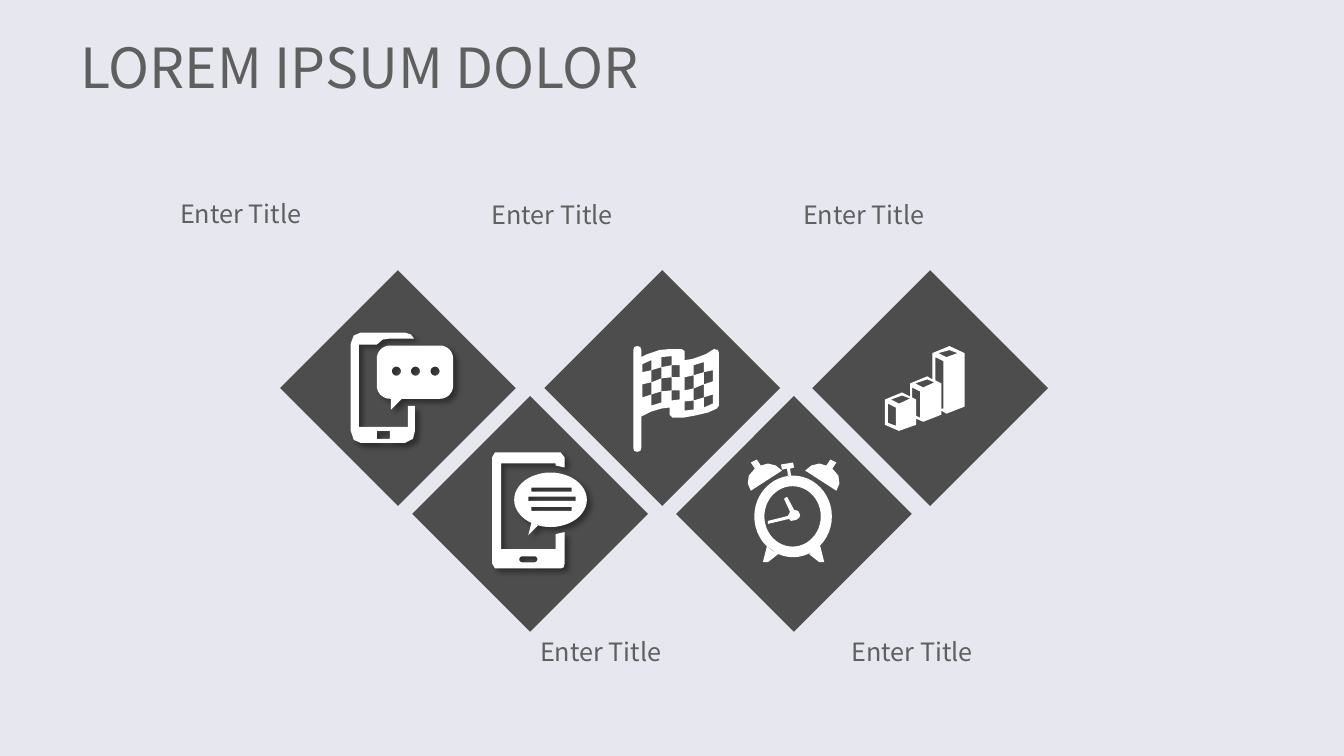
import math

import pptx
import pptx.dml.color
import pptx.enum.shapes
import pptx.enum.text
import pptx.util
import pptx.oxml
from pptx.util import Cm

FONT = "Noto Sans CJK JP"
TEXT, TILE, ICON, BACKDROP = "5F5F5F", "4D4D4D", "FFFFFF", "E7E7EF"
TILE_SIZE = Cm(5.94)
FINENESS = 10  # freeform steps per icon grid unit
SHADOW = (
    '<a:outerShdw xmlns:a="http://schemas.openxmlformats.org/drawingml/2006/main" '
    'blurRad="50800" dist="50800" dir="2700000" algn="tl" rotWithShape="0">'
    '<a:srgbClr val="000000"><a:alpha val="40000"/></a:srgbClr></a:outerShdw>'
)


def paint(fill, color):
    fill.solid()
    fill.fore_color.rgb = pptx.dml.color.RGBColor.from_string(color)


# Outlines on an icon's grid
def arc(cx, cy, rx, ry, start=0, sweep=360, steps=48):
    angles = [math.radians(start + sweep * i / steps) for i in range(steps + 1)]
    return [(cx + rx * math.cos(a), cy + ry * math.sin(a)) for a in angles]


def rounded(left, top, width, height, r):
    right, bottom = left + width, top + height
    corners = [(right - r, bottom - r), (left + r, bottom - r),
               (left + r, top + r), (right - r, top + r)]
    return [point for i, (x, y) in enumerate(corners)
            for point in arc(x, y, r, r, 90 * i, 90, 8)]


def rectangle(left, top, right, bottom):
    return [(left, top), (right, top), (right, bottom), (left, bottom)]


def mirrored(outline, width):
    return [(width - x, y) for x, y in outline]


# Icons: each returns its grid width and outlines; inner outlines are holes
def message_phone():
    body = [(10, 0), (54, 0), (60, 2), (63, 6), (39, 6), (32, 7), (26, 12), (8, 12),
            (8, 94), (57, 94), (57, 73), (64, 73), (64, 98), (62, 106), (54, 110),
            (10, 110), (3, 107), (0, 98), (0, 11), (3, 3)]
    tail = [(40, 66), (40, 77), (51, 66)]
    dots = [arc(x, 38.5, 4.5, 4.5) for x in (45.5, 64.5, 84)]
    return 102, [body, rounded(26, 13, 76, 53, 13), tail,
                 rectangle(26, 98, 39, 106)] + dots


def text_phone():
    body = [(3, 0), (68, 0), (72, 5), (72, 15), (63, 13), (63, 11), (9, 11), (9, 96),
            (63, 96), (63, 81), (72, 79), (72, 110), (71, 114), (68, 115), (3, 115),
            (0, 110), (0, 5)]
    tail = [(46, 72), (36, 82), (39, 70)]
    lines = [rectangle(39, 35, 79, 39), rectangle(36, 44, 83, 48),
             rectangle(39, 54, 79, 58)]
    return 94, [body, arc(58, 47, 36, 27), tail, rounded(27, 103, 18, 6, 3)] + lines


def flag():
    cloth = [(4, 0), (7, 1), (8, 4), (8, 11), (14, 8), (26, 4), (36, 3), (48, 3),
             (51, 5), (51, 14), (58, 13), (64, 11), (72, 8), (80, 3), (84, 4), (85, 7),
             (85, 59), (83, 62), (74, 66), (61, 69), (50, 71), (39, 71), (36, 68),
             (36, 61), (28, 62), (18, 65), (8, 70), (8, 101), (7, 104), (4, 105),
             (1, 104), (0, 101), (0, 4), (1, 1)]
    # Left edge, right edge, then the heights of the four corners
    checks = [(9, 18, 18, 14, 24, 26), (9, 18, 38, 36, 48, 51),
              (18, 28, 24, 21, 32, 36), (18, 28, 48, 45, 56, 59),
              (28, 38, 11, 10, 19, 21), (28, 38, 32, 31, 44, 45),
              (38, 46, 19, 19, 31, 31), (38, 46, 44, 44, 53, 54),
              (51, 60, 31, 29, 42, 44), (51, 60, 55, 54, 63, 64),
              (60, 70, 19, 16, 26, 29), (60, 70, 42, 38, 51, 54),
              (70, 79, 26, 24, 35, 38), (70, 79, 51, 48, 57, 61)]
    return 85, [cloth] + [[(left, a), (right, b), (right, c), (left, d)]
                          for left, right, a, b, c, d in checks]


def alarm_clock():
    bell = [(14, 6), (10, 0), (4, 3), (8, 9), (2, 16), (1, 24), (4, 31), (35, 11),
            (29, 6), (21, 4)]
    foot = [(20, 86), (16, 102), (21, 102), (31, 94)]
    stem = [(41, 17), (40, 9), (35, 10), (34, 5), (46, 3), (47, 8), (43, 9), (44, 16)]
    hands = [(37, 39), (43, 52), (41, 56), (21, 61), (21, 64), (42, 59), (44, 61),
             (49, 60), (52, 58), (53, 55), (51, 51), (47, 50), (40, 37)]
    return 93, [arc(46, 56.5, 38.5, 40.5), arc(45.5, 56.5, 28, 30), hands, stem,
                bell, mirrored(bell, 93), foot, mirrored(foot, 93)]


def bars():
    blocks = [(25, 37), (42, 30), (47, 33), (47, 7), (64, 0), (79, 7), (79, 60),
              (61, 67), (56, 64), (56, 68), (38, 75), (31, 72), (31, 78), (14, 84),
              (0, 78), (0, 53), (17, 46), (31, 53), (31, 69), (35, 71), (35, 45),
              (27, 41), (27, 51), (25, 50)]
    tops = [[(53, 7), (61, 11), (72, 7), (64, 4)],
            [(30, 37), (38, 41), (49, 36), (42, 33)],
            [(6, 53), (14, 57), (25, 52), (17, 49)]]
    sides = [[(3, 57), (11, 61), (11, 79), (3, 76)],
             [(50, 34), (56, 37), (56, 62), (58, 62), (58, 15), (50, 11)]]
    return 79, [blocks] + tops + sides


def add_icon(page, left, top, width, icon, shadowed):
    grid_width, outlines = icon()
    builder = None
    for outline in outlines:
        points = [(x * FINENESS, y * FINENESS) for x, y in outline]
        if builder is None:
            builder = page.shapes.build_freeform(
                *points[0], scale=width / (grid_width * FINENESS))
        else:
            builder.move_to(*points[0])
        builder.add_line_segments(points[1:], close=True)
    shape = builder.convert_to_shape(left, top)
    paint(shape.fill, ICON)
    shape.line.fill.background()
    shape.shadow.inherit = False
    if shadowed:
        effects = shape._element.spPr.find(pptx.oxml.ns.qn("a:effectLst"))
        effects.append(pptx.oxml.parse_xml(SHADOW))


def add_text(page, left, top, width, height, text, size):
    box = page.shapes.add_textbox(left, top, width, height)
    box.text_frame.word_wrap = True
    para = box.text_frame.paragraphs[0]
    para.text = text
    para.font.name = FONT
    para.font.size = pptx.util.Pt(size)
    para.font.color.rgb = pptx.dml.color.RGBColor.from_string(TEXT)
    return box


def add_title(page, left, top, width, height):
    box = add_text(page, left, top, width, height, "LOREM IPSUM DOLOR", 39.5)
    frame = box.text_frame
    frame.vertical_anchor = pptx.enum.text.MSO_ANCHOR.MIDDLE
    frame.margin_left = frame.margin_right = Cm(0.33)
    frame.margin_top = frame.margin_bottom = Cm(0.18)


def add_tile(page, left, top, icon, icon_box, label_at, shadowed=False):
    """Diamond with its icon and label, both placed from its corner."""
    diamond = page.shapes.add_shape(
        pptx.enum.shapes.MSO_SHAPE.DIAMOND, left, top, TILE_SIZE, TILE_SIZE)
    paint(diamond.fill, TILE)
    diamond.line.fill.background()
    diamond.shadow.inherit = False
    dx, dy, width = icon_box
    add_icon(page, left + Cm(dx), top + Cm(dy), Cm(width), icon, shadowed)
    dx, dy = label_at
    label = add_text(page, left + Cm(dx), top + Cm(dy), Cm(7.06), Cm(2.54),
                     "Enter Title", 18)
    label.text_frame.paragraphs[0].line_spacing = 1.2


def main():
    deck = pptx.Presentation()
    deck.slide_width, deck.slide_height = Cm(33.87), Cm(19.05)
    page = deck.slides.add_slide(deck.slide_layouts[6])
    paint(page.background.fill, BACKDROP)
    add_title(page, Cm(1.7), Cm(0.76), Cm(30.48), Cm(1.83))

    # Upper row of diamonds
    upper, lower = Cm(6.81), Cm(9.98)
    add_tile(page, Cm(7.06), upper, message_phone, (1.78, 1.57, 2.58), (-2.77, -2.09), True)
    add_tile(page, Cm(13.72), upper, flag, (2.24, 1.91, 2.16), (-1.58, -2.06))
    add_tile(page, Cm(20.47), upper, bars, (1.83, 1.91, 2.01), (-0.48, -2.06))
    # Lower row of diamonds
    add_tile(page, Cm(10.39), lower, text_phone, (2.01, 1.42, 2.39), (2.97, 5.79), True)
    add_tile(page, Cm(17.04), lower, alarm_clock, (1.78, 1.6, 2.36), (4.17, 5.77))
    deck.save("out.pptx")


if __name__ == "__main__":
    main()
